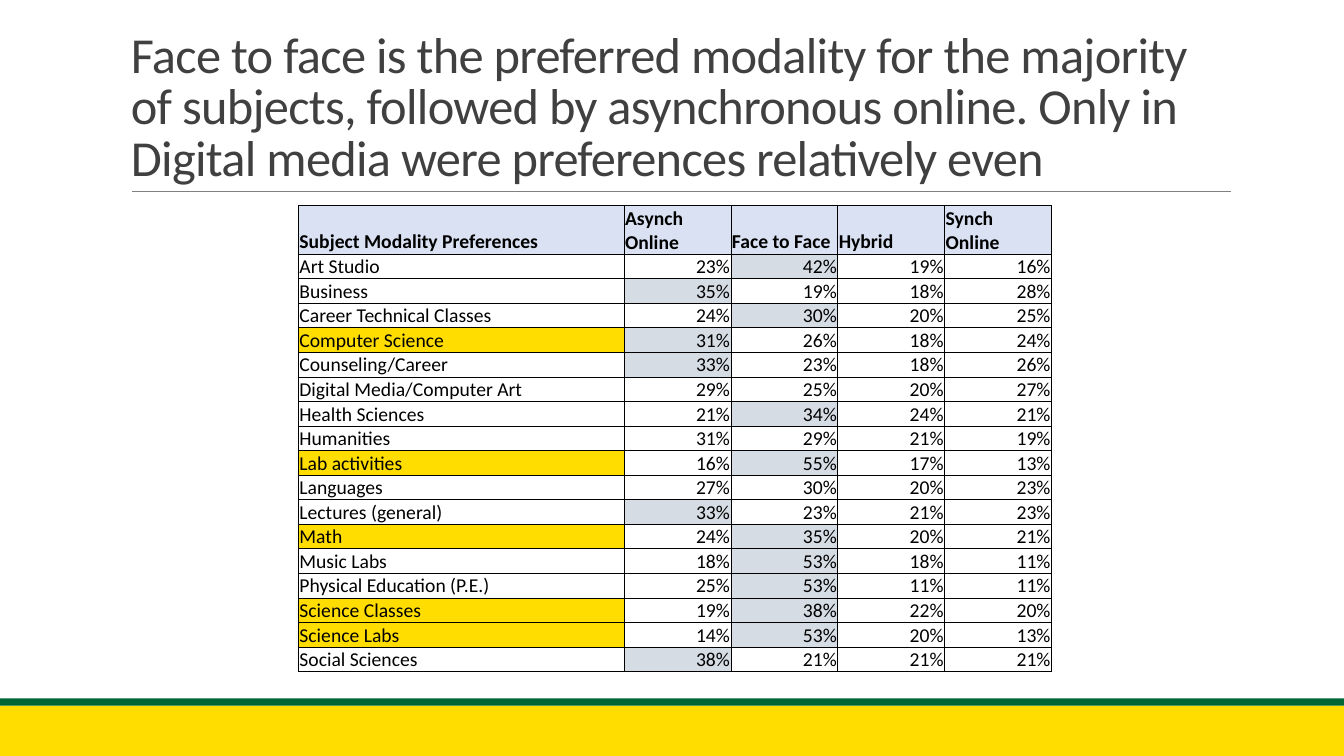
import lxml.etree
import pptx
import pptx.dml.color
import pptx.enum.shapes
import pptx.enum.text
import pptx.oxml.ns
import pptx.util

Inches = pptx.util.Inches
Pt = pptx.util.Pt
ALIGN = pptx.enum.text.PP_ALIGN
ANCHOR = pptx.enum.text.MSO_ANCHOR
qn = pptx.oxml.ns.qn

COLORS = {
    "gold": "FFDD00", "green": "006633", "rule": "808080", "title": "404040",
    "text": "000000", "head": "D9E1F2", "top": "D6DCE4",
}

TITLE = ("Face to face is the preferred modality for the majority of subjects, "
         "followed by asynchronous online. Only in Digital media were "
         "preferences relatively even")
HEADS = ["Subject Modality Preferences", "Asynch Online", "Face to Face",
         "Hybrid", "Synch Online"]
ROWS = [
    ("Art Studio", 23, 42, 19, 16),
    ("Business", 35, 19, 18, 28),
    ("Career Technical Classes", 24, 30, 20, 25),
    ("Computer Science", 31, 26, 18, 24),
    ("Counseling/Career", 33, 23, 18, 26),
    ("Digital Media/Computer Art", 29, 25, 20, 27),
    ("Health Sciences", 21, 34, 24, 21),
    ("Humanities", 31, 29, 21, 19),
    ("Lab activities", 16, 55, 17, 13),
    ("Languages", 27, 30, 20, 23),
    ("Lectures (general)", 33, 23, 21, 23),
    ("Math", 24, 35, 20, 21),
    ("Music Labs", 18, 53, 18, 11),
    ("Physical Education (P.E.)", 25, 53, 11, 11),
    ("Science Classes", 19, 38, 22, 20),
    ("Science Labs", 14, 53, 20, 13),
    ("Social Sciences", 38, 21, 21, 21),
]
STEM = {"Computer Science", "Lab activities", "Math", "Science Classes",
        "Science Labs"}
LEAD = 5  # points ahead of the runner-up that earn a shaded cell


def color(name):
    return pptx.dml.color.RGBColor.from_string(COLORS[name])


def assign(target, values):
    for name, value in values.items():
        setattr(target, name, value)


class Painter:
    """Holds the style and the current slide."""

    font = "Calibri"

    def __init__(self, slide):
        self.slide = slide

    def bar(self, x, y, w, h, fill):
        box = self.slide.shapes.add_shape(
            pptx.enum.shapes.MSO_SHAPE.RECTANGLE,
            Inches(x), Inches(y), Inches(w), Inches(h))
        box.shadow.inherit = False
        box.fill.solid()
        box.fill.fore_color.rgb = color(fill)
        box.line.fill.background()

    def rule(self, x1, x2, y):
        line = self.slide.shapes.add_connector(
            pptx.enum.shapes.MSO_CONNECTOR.STRAIGHT,
            Inches(x1), Inches(y), Inches(x2), Inches(y))
        line.line.color.rgb = color("rule")
        line.line.width = Pt(0.5)
        lxml.etree.SubElement(line._element.spPr, qn("a:effectLst"))

    def label(self, frame, text, size, tint, bold=False, align=ALIGN.LEFT):
        para = frame.paragraphs[0]
        para.alignment = align
        run = para.add_run()
        run.text = text
        assign(run.font, {"name": self.font, "size": Pt(size), "bold": bold})
        run.font.color.rgb = color(tint)
        return para, run

    def title(self, x, y, w, h, text):
        box = self.slide.shapes.add_textbox(
            Inches(x), Inches(y), Inches(w), Inches(h))
        frame = box.text_frame
        assign(frame, {"word_wrap": True, "vertical_anchor": ANCHOR.BOTTOM})
        para, run = self.label(frame, text, 36, "title")
        para.line_spacing = 0.85
        run._r.get_or_add_rPr().set("spc", "-50")

    def border(self, cell):
        props = cell._tc.get_or_add_tcPr()
        for side in ("L", "R", "T", "B"):
            edge = lxml.etree.SubElement(
                props, qn(f"a:ln{side}"), w=str(Pt(0.5)))
            fill = lxml.etree.SubElement(edge, qn("a:solidFill"))
            lxml.etree.SubElement(fill, qn("a:srgbClr"), val=COLORS["text"])

    def cell(self, cell, text, fill, bold, align):
        inset = Inches(0.01)
        assign(cell, {
            "margin_left": inset, "margin_right": inset, "margin_top": inset,
            "margin_bottom": 0, "vertical_anchor": ANCHOR.BOTTOM})
        self.border(cell)
        if fill:
            cell.fill.solid()
            cell.fill.fore_color.rgb = color(fill)
        else:
            cell.fill.background()
        self.label(cell.text_frame, text, 14, "text", bold, align)

    def table(self, x, y, widths, heights):
        grid = self.slide.shapes.add_table(
            len(heights), len(widths), Inches(x), Inches(y),
            Inches(sum(widths)), Inches(sum(heights))).table
        assign(grid, {"first_row": False, "horz_banding": False})
        for col, width in zip(grid.columns, widths):
            col.width = Inches(width)
        for row, height in zip(grid.rows, heights):
            row.height = Inches(height)
        return grid


def main():
    deck = pptx.Presentation()
    deck.slide_width = Inches(13.33)
    deck.slide_height = Inches(7.5)
    pen = Painter(deck.slides.add_slide(deck.slide_layouts[6]))

    # Footer bands and title
    pen.bar(0, 7, 13.33, 0.5, "gold")
    pen.bar(0, 6.93, 13.33, 0.07, "green")
    pen.rule(1.31, 12.21, 1.9)
    pen.title(1.2, 0.31, 11, 1.59, TITLE)

    # Preference table: header row, then one row per subject
    grid = pen.table(2.96, 2.04, [3.23] + [1.06] * 4,
                     [0.48] + [0.24] * len(ROWS))
    for c, head in enumerate(HEADS):
        pen.cell(grid.cell(0, c), head, "head", True, ALIGN.LEFT)
    for r, (subject, *shares) in enumerate(ROWS, 1):
        mark = "gold" if subject in STEM else None
        pen.cell(grid.cell(r, 0), subject, mark, False, ALIGN.LEFT)
        second, first = sorted(shares)[-2:]
        for c, share in enumerate(shares, 1):
            clear = share == first and first - second >= LEAD
            pen.cell(grid.cell(r, c), f"{share}%", "top" if clear else None,
                     False, ALIGN.RIGHT)

    deck.save("out.pptx")


if __name__ == "__main__":
    main()
